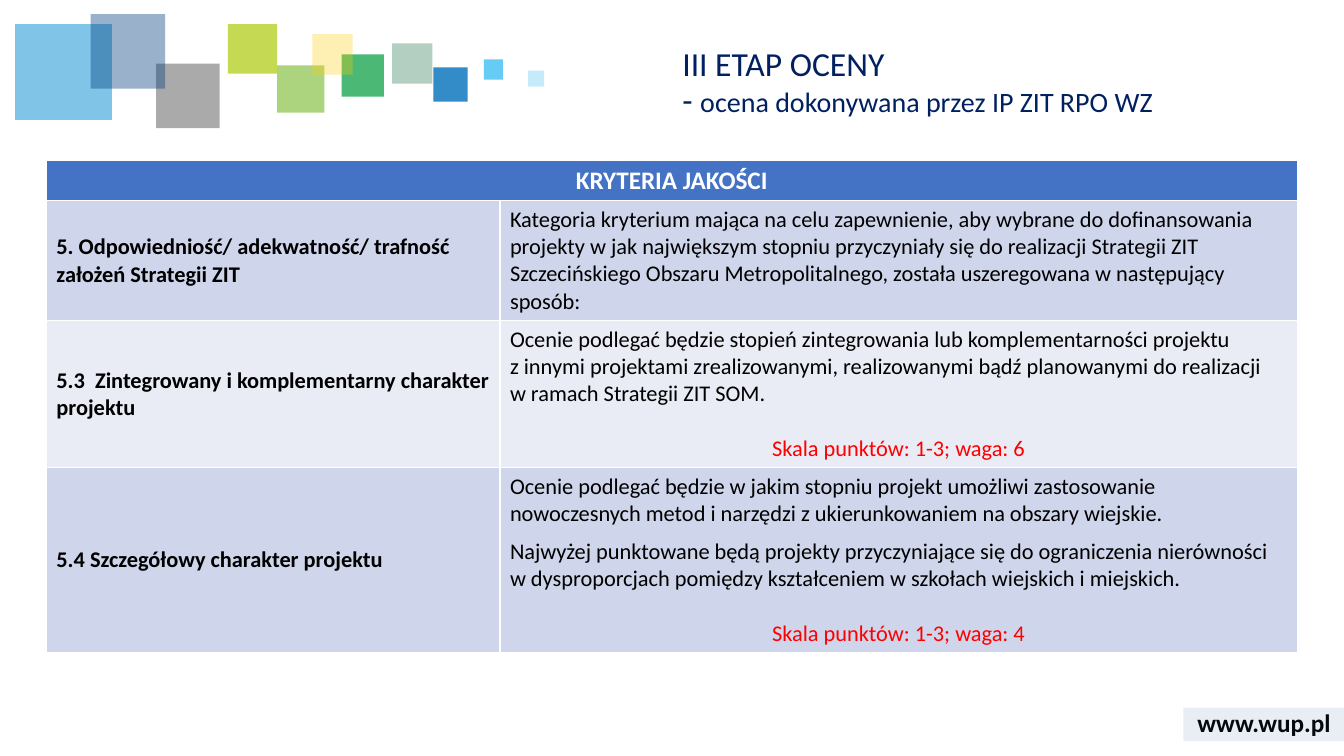
"""Build the slide on the quality criteria of the third assessment stage."""
from dataclasses import dataclass
from typing import NamedTuple

from lxml import etree
from pptx import Presentation
from pptx import util as u
from pptx.dml.color import RGBColor
from pptx.enum import shapes, text
from pptx.oxml.ns import qn


@dataclass(frozen=True)
class Theme:
    """Colours and type sizes of the slide."""
    font: str = "Calibri"
    navy: str = "002060"
    black: str = "000000"
    white: str = "FFFFFF"
    red: str = "FF0000"
    header: str = "4472C4"
    bands: tuple[str, str] = ("CFD5EA", "E9EBF5")
    title: int = 24
    subtitle: int = 20
    heading: int = 18
    body: int = 16


class Block(NamedTuple):
    """A tinted rectangle, with opacity in percent."""
    left: float
    top: float
    width: float
    height: float
    colour: str
    opacity: int


class Line(NamedTuple):
    """A paragraph of a table cell."""
    words: str
    before: float = 0
    is_scale: bool = False


class Criterion(NamedTuple):
    """A table row: the name of a criterion and its description."""
    name: str
    height: float
    lines: tuple[Line, ...]


THEME = Theme()
BLANK_LINE = 19.5
SMALL_GAP = 7.3

BLOCKS = (
    Block(280.1, 31, 28.8, 28.8, "006138", 30),
    Block(309.6, 48.2, 24.5, 24.5, "006EB9", 80),
    Block(244.1, 38.9, 30.2, 30.2, "009A3C", 70),
    Block(10.8, 17.3, 69.1, 68.4, "028BD3", 50),
    Block(198, 46.8, 33.8, 33.8, "75B82A", 60),
    Block(111.6, 45.4, 45.4, 46.1, "575757", 50),
    Block(64.8, 10.1, 53.3, 53.3, "003D7C", 40),
    Block(345.6, 42.5, 13.7, 14.4, "40C0F1", 80),
    Block(162.7, 17.3, 35.3, 35.3, "AFCA0B", 70),
    Block(223.2, 24.5, 28.8, 28.8, "FED000", 30),
    Block(377.3, 50.4, 11.5, 11.5, "40C0F1", 30),
    Block(845.3, 505.4, 115.2, 23.8, "2F5597", 10),
)

CRITERIA = (
    Criterion("5. Odpowiedniość/ adekwatność/ trafność założeń Strategii ZIT", 85.7, (
        Line("Kategoria kryterium mająca na celu zapewnienie, aby wybrane do dofinansowania"),
        Line("projekty w jak największym stopniu przyczyniały się do realizacji Strategii ZIT"),
        Line("Szczecińskiego Obszaru Metropolitalnego, została uszeregowana w następujący"),
        Line("sposób:"),
    )),
    Criterion("5.3  Zintegrowany i komplementarny charakter projektu", 105.1, (
        Line("Ocenie podlegać będzie stopień zintegrowania lub komplementarności projektu"),
        Line("z innymi projektami zrealizowanymi, realizowanymi bądź planowanymi do realizacji"),
        Line("w ramach Strategii ZIT SOM."),
        Line("Skala punktów: 1-3; waga: 6", BLANK_LINE, True),
    )),
    Criterion("5.4 Szczegółowy charakter projektu", 131.8, (
        Line("Ocenie podlegać będzie w jakim stopniu projekt umożliwi zastosowanie "
             "nowoczesnych metod i narzędzi z ukierunkowaniem na obszary wiejskie."),
        Line("Najwyżej punktowane będą projekty przyczyniające się do ograniczenia nierówności",
             SMALL_GAP),
        Line("w dysproporcjach pomiędzy kształceniem w szkołach wiejskich i miejskich."),
        Line("Skala punktów: 1-3; waga: 4", BLANK_LINE, True),
    )),
)


def style(font, size: int, colour: str, bold: bool = False) -> None:
    """Set the typeface, size, colour and weight of a font."""
    font.name, font.size, font.bold = THEME.font, u.Pt(size), bold
    font.color.rgb = RGBColor.from_string(colour)


def place(shape, left: float, top: float, width: float, height: float) -> None:
    """Move and size a shape in points."""
    shape.left, shape.top = u.Pt(left), u.Pt(top)
    shape.width, shape.height = u.Pt(width), u.Pt(height)


def draw_block(page, block: Block) -> None:
    """Draw a borderless translucent rectangle."""
    box = page.shapes.add_shape(
        shapes.MSO_SHAPE.RECTANGLE, *(u.Pt(length) for length in block[:4]))
    box.shadow.inherit = False
    box.line.fill.background()
    box.fill.solid()
    box.fill.fore_color.rgb = RGBColor.from_string(block.colour)
    colour = box.fill._xPr.find(f".//{qn('a:srgbClr')}")
    etree.SubElement(colour, qn("a:alpha"), val=str(block.opacity * 1000))


def draw_title(page) -> None:
    """Fill the title placeholder with the stage and its assessor."""
    title = page.shapes.title
    place(title, 480.2, 30.2, 457.9, 57)
    frame = title.text_frame
    frame.auto_size = text.MSO_AUTO_SIZE.NONE
    frame.vertical_anchor = text.MSO_ANCHOR.TOP
    para = frame.paragraphs[0]
    para.alignment = text.PP_ALIGN.LEFT
    para.line_spacing = 0.9
    pieces = (("III ETAP OCENY\v- ", THEME.title),
              ("ocena dokonywana przez IP ZIT RPO WZ", THEME.subtitle))
    for words, size in pieces:
        for index, part in enumerate(words.split("\v")):
            if index:
                para.add_line_break()
            span = para.add_run()
            span.text = part
            style(span.font, size, THEME.navy)


def draw_address(page) -> None:
    """Write the web address in the lower right corner."""
    box = page.shapes.add_textbox(u.Pt(845.3), u.Pt(501.8), u.Pt(115.2), u.Pt(28.8))
    frame = box.text_frame
    frame.word_wrap = True
    frame.vertical_anchor = text.MSO_ANCHOR.MIDDLE
    para = frame.paragraphs[0]
    para.text = "www.wup.pl"
    para.alignment = text.PP_ALIGN.CENTER
    style(para.font, THEME.heading, THEME.black, True)


def fill_cell(cell, fill: str, lines: tuple[Line, ...]) -> None:
    """Colour a cell and write its paragraphs in body type."""
    cell.fill.solid()
    cell.fill.fore_color.rgb = RGBColor.from_string(fill)
    for index, line in enumerate(lines):
        frame = cell.text_frame
        para = frame.add_paragraph() if index else frame.paragraphs[0]
        para.text = line.words
        if line.before:
            para.space_before = u.Pt(line.before)
        if line.is_scale:
            para.alignment = text.PP_ALIGN.CENTER
        style(para.font, THEME.body, THEME.red if line.is_scale else THEME.black)


def draw_criteria(page) -> None:
    """Draw the table of quality criteria."""
    heights = (28.8, *(criterion.height for criterion in CRITERIA))
    widths = (324, 569.5)
    table = page.shapes.add_table(
        len(heights), len(widths), u.Pt(33.1), u.Pt(114.5),
        u.Pt(sum(widths)), u.Pt(sum(heights))).table
    for column, width in zip(table.columns, widths):
        column.width = u.Pt(width)
    for row, height in zip(table.rows, heights):
        row.height = u.Pt(height)
    header = table.cell(0, 0)
    header.merge(table.cell(0, 1))
    fill_cell(header, THEME.header, (Line("KRYTERIA JAKOŚCI"),))
    para = header.text_frame.paragraphs[0]
    para.alignment = text.PP_ALIGN.CENTER
    style(para.font, THEME.heading, THEME.white, True)
    for row, criterion in enumerate(CRITERIA, start=1):
        band = THEME.bands[(row - 1) % 2]
        name = table.cell(row, 0)
        fill_cell(name, band, (Line(criterion.name),))
        name.vertical_anchor = text.MSO_ANCHOR.MIDDLE
        name.text_frame.paragraphs[0].font.bold = True
        fill_cell(table.cell(row, 1), band, criterion.lines)


def main() -> None:
    """Create the deck and save it."""
    deck = Presentation()
    deck.slide_width, deck.slide_height = u.Pt(960), u.Pt(540)
    page = deck.slides.add_slide(deck.slide_layouts[5])
    draw_address(page)
    for block in BLOCKS:
        draw_block(page, block)
    draw_criteria(page)
    draw_title(page)
    deck.save("out.pptx")


if __name__ == "__main__":
    main()
